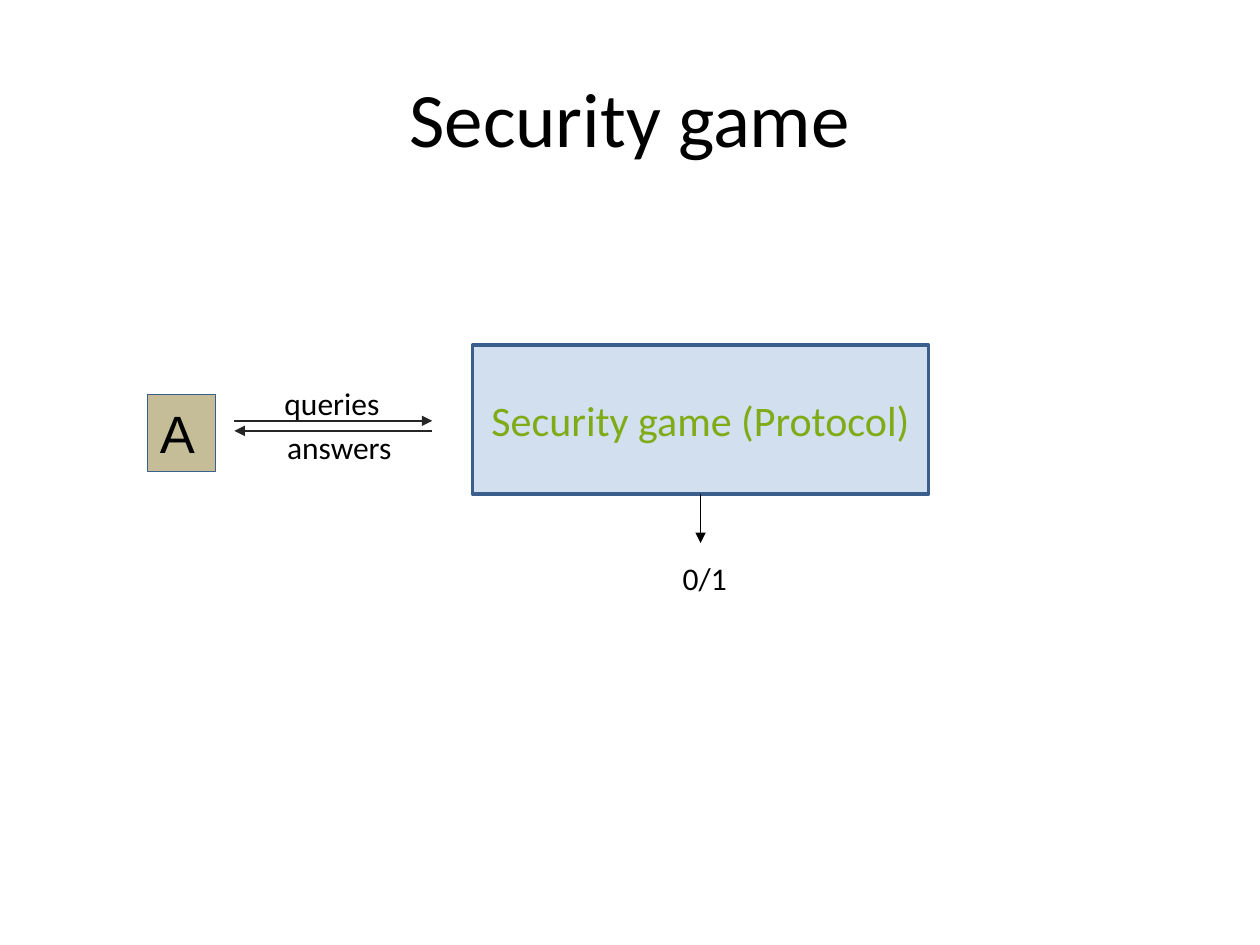
from dataclasses import dataclass

from lxml.etree import SubElement
from pptx import Presentation
from pptx.dml.color import RGBColor
from pptx.enum.shapes import MSO_CONNECTOR as Connector, MSO_SHAPE as Shape
from pptx.enum.text import MSO_ANCHOR as Anchor, PP_ALIGN as Align
from pptx.oxml.ns import qn
from pptx.util import Inches, Pt

COLS, ROWS = 100, 75
CELL = Inches(0.1)


@dataclass(frozen=True)
class Theme:
    """Colours, fonts and type sizes of the slide."""
    ink: str = "000000"
    arrow: str = "262626"
    border: str = "3A5F8C"
    game: str = "4F81BD"
    game_text: str = "7FAB16"
    adversary: str = "C4BD97"
    font: str = "Calibri"
    adversary_font: str = "Arial"
    title: int = 44
    adversary_size: int = 30
    game_size: int = 24
    label: int = 18


THEME = Theme()


def cells(*counts):
    """Turn grid counts into lengths."""
    return [round(n * CELL) for n in counts]


def write(tf, text, size, color=THEME.ink, font=THEME.font, align=Align.LEFT,
          anchor=Anchor.TOP, wrap=True):
    """Put one formatted paragraph in a text frame."""
    tf.word_wrap = wrap
    tf.vertical_anchor = anchor
    p = tf.paragraphs[0]
    p.text = text
    p.alignment = align
    p.font.size = Pt(size)
    p.font.name = font
    p.font.color.rgb = RGBColor.from_string(color)


def add_title(s, text, box):
    """Place and fill the title placeholder."""
    sp = s.shapes.title
    sp.left, sp.top, sp.width, sp.height = cells(*box)
    write(sp.text_frame, text, THEME.title, align=Align.CENTER, anchor=Anchor.MIDDLE)


def add_box(s, box, fill, line_width, opacity=100):
    """Add a bordered rectangle and return its text frame."""
    sp = s.shapes.add_shape(Shape.RECTANGLE, *cells(*box))
    sp.shadow.inherit = False
    sp.fill.solid()
    sp.fill.fore_color.rgb = RGBColor.from_string(fill)
    if opacity < 100:
        color = sp.fill._xPr.find(qn("a:solidFill"))[0]
        SubElement(color, qn("a:alpha"), val=str(opacity * 1000))
    sp.line.color.rgb = RGBColor.from_string(THEME.border)
    sp.line.width = Pt(line_width)
    return sp.text_frame


def add_label(s, text, box, wrap=True):
    """Add a plain text label."""
    sp = s.shapes.add_textbox(*cells(*box))
    write(sp.text_frame, text, THEME.label, wrap=wrap)


def add_arrow(s, start, end, color, width):
    """Add a straight arrow with a triangle at its end."""
    line = s.shapes.add_connector(Connector.STRAIGHT, *cells(*start, *end))
    line.line.color.rgb = RGBColor.from_string(color)
    line.line.width = Pt(width)
    SubElement(line.line._get_or_add_ln(), qn("a:tailEnd"), type="triangle")
    SubElement(line._element.spPr, qn("a:effectLst"))


def main():
    """Build the security game slide."""
    prs = Presentation()
    prs.slide_width, prs.slide_height = cells(COLS, ROWS)
    s = prs.slides.add_slide(prs.slide_layouts[5])
    add_title(s, "Security game", (5, 3, COLS - 10, 12.5))

    left, top, width, height = game = (37.5, 27.4, 36.2, 11.8)
    tf = add_box(s, game, THEME.game, 2, opacity=25)
    write(tf, "Security game (Protocol)", THEME.game_size, THEME.game_text,
          align=Align.CENTER, anchor=Anchor.MIDDLE)
    tf = add_box(s, (11.7, 31.3, 5.4, 6.1), THEME.adversary, 0.75)
    write(tf, "A", THEME.adversary_size, font=THEME.adversary_font, wrap=False)

    near, far = 18.6, 34.3
    add_arrow(s, (far, 34.2), (near, 34.2), THEME.arrow, 1)
    add_arrow(s, (near, 33.4), (far, 33.4), THEME.arrow, 1)
    add_label(s, "queries", (21.6, 30, far - near, 4))
    add_label(s, "answers", (21.8, 33.5, far - near, 4))

    middle, bottom = left + width / 2, top + height
    add_arrow(s, (middle, bottom), (middle, bottom + 3.9), THEME.ink, 0.75)
    add_label(s, "0/1", (53.2, 43.9, 5.5, 4), wrap=False)
    prs.save("out.pptx")


if __name__ == "__main__":
    main()
